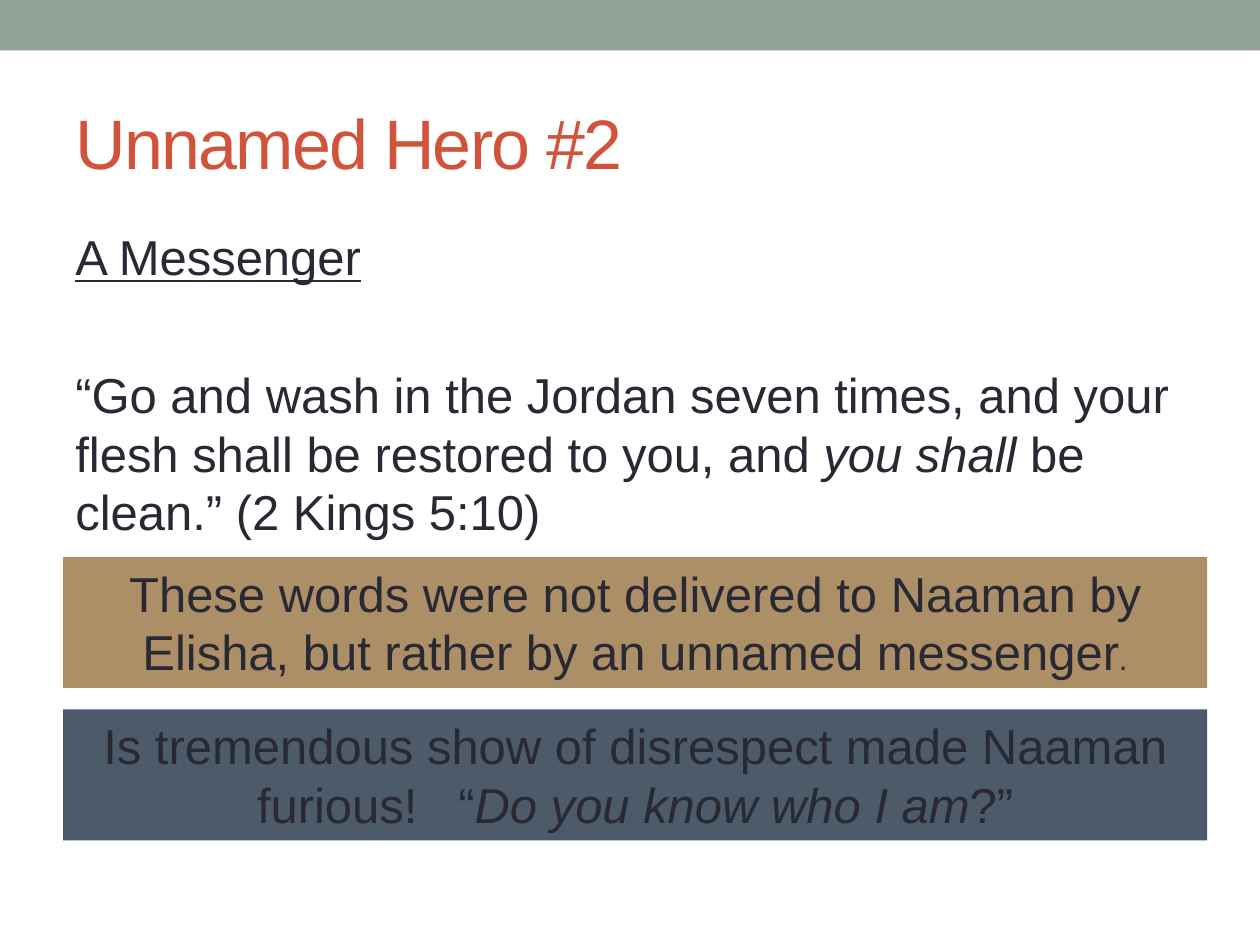
from pptx import Presentation
from pptx.dml.color import RGBColor as RGB
from pptx.enum.shapes import MSO_SHAPE as Shape
from pptx.enum.text import MSO_ANCHOR as Anchor, PP_ALIGN as Align
from pptx.util import Inches, Pt

SAGE = RGB(0x93, 0xA2, 0x99)
RUST = RGB(0xD2, 0x53, 0x3C)
INK = RGB(0x29, 0x29, 0x34)
TAN = RGB(0xAD, 0x8F, 0x67)
SLATE = RGB(0x4C, 0x5A, 0x6A)

WIDE, HIGH = 10, 7.5
COLS, ROWS = 20, 15  # half-inch grid


class Deck:
    font = {"name": "Arial", "size": Pt(28)}

    def __init__(self):
        self.prs = Presentation()
        self.prs.slide_width = Inches(WIDE)
        self.prs.slide_height = Inches(HIGH)
        self.slide = self.prs.slides.add_slide(self.prs.slide_layouts[6])

    def place(self, col, row, cols, rows):
        """Turn grid columns and rows into lengths."""
        dx, dy = WIDE / COLS, HIGH / ROWS
        return [Inches(n) for n in (col * dx, row * dy, cols * dx, rows * dy)]

    def fill_in(self, para, runs, color=INK, **form):
        """Add (text, font values) runs; track is letter spacing in points."""
        for key, val in form.items():
            setattr(para, key, val)
        for text, vals in runs:
            run = para.add_run()
            run.text = text
            vals = dict(vals)
            track = vals.pop("track", None)
            for key, val in {**self.font, **vals}.items():
                setattr(run.font, key, val)
            run.font.color.rgb = color
            if track:
                run._r.get_or_add_rPr().set("spc", str(int(track * 100)))

    def text(self, grid, paras, color=INK, anchor=Anchor.TOP):
        """Text box; paras holds (runs, space before) pairs."""
        frame = self.slide.shapes.add_textbox(*self.place(*grid)).text_frame
        frame.word_wrap = True
        frame.vertical_anchor = anchor
        for i, (runs, gap) in enumerate(paras):
            para = frame.add_paragraph() if i else frame.paragraphs[0]
            self.fill_in(para, runs, color, space_before=Pt(gap))

    def band(self, grid, fill, runs=()):
        """Filled rectangle with centred text."""
        box = self.slide.shapes.add_shape(Shape.RECTANGLE, *self.place(*grid))
        box.shadow.inherit = False
        box.fill.solid()
        box.fill.fore_color.rgb = fill
        box.line.fill.background()
        frame = box.text_frame
        frame.word_wrap = True
        frame.vertical_anchor = Anchor.TOP
        self.fill_in(frame.paragraphs[0], runs, alignment=Align.CENTER)


def main():
    deck = Deck()
    slant = {"italic": True}

    # Top bar and title
    deck.band((0, 0, COLS, 0.8), SAGE)
    title = [("Unnamed Hero #2", {"size": Pt(40), "track": -1})]
    deck.text((1, 1.16, 18, 2.16), [(title, 0)], RUST, Anchor.MIDDLE)

    # Heading and verse, one open line apart
    deck.text((1, 3.5, 18, 5.5), [
        ([("A Messenger", {"underline": True})], 5.6),
        ([("“Go and wash in the Jordan seven times, and your flesh "
           "shall be restored to you, and ", {}),
          ("you shall", slant),
          (" be clean.” (2 Kings 5:10)", {})], 45),
    ])

    # Comment bands
    notes = [
        (TAN, [("These words were not delivered to Naaman by Elisha, "
                "but rather by an unnamed messenger", {}),
               (".", {"size": Pt(18)})]),
        (SLATE, [("Is tremendous show of disrespect made Naaman furious!", {}),
                 (" ", {"track": 15.6}),
                 ("“", {}),
                 ("Do you know who I am", slant),
                 ("?”", {})]),
    ]
    for i, (fill, runs) in enumerate(notes):
        deck.band((1, 8.84 + 2.42 * i, 18.16, 2.08), fill, runs)

    deck.prs.save("out.pptx")


if __name__ == "__main__":
    main()
